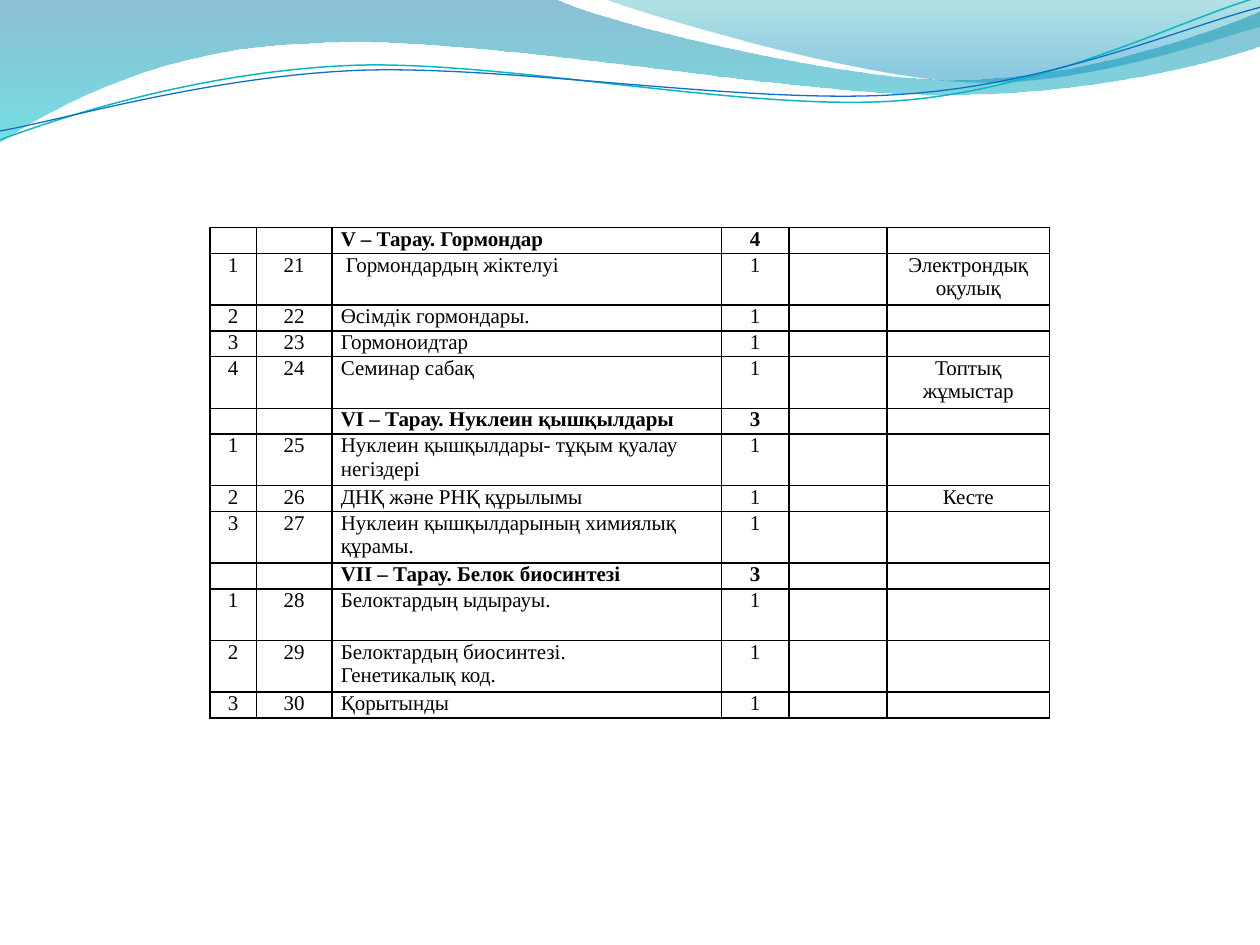
from math import cos, radians, sin

from lxml.etree import SubElement
from pptx import Presentation
from pptx.dml.color import RGBColor
from pptx.enum.text import PP_ALIGN
from pptx.oxml import parse_xml
from pptx.oxml.ns import nsdecls, qn
from pptx.util import Cm, Pt

LEFT_WAVE = [
    (0, 0), (11.18, -0.03),
    (12.09, 0.43, 16.87, 1.6, 19.25, 1.6),
    (21.79, 1.6, 24.33, 0.66, 25.4, 0.23),
    (25.43, 0.91),
    (24.97, 1.12, 22.1, 1.93, 18.95, 1.91),
    (15.8, 1.91, 9.7, 0.71, 6.53, 0.86),
    (3.28, 0.91, 1.17, 2.11, -0.03, 2.87),
]
RIGHT_WAVE = [
    (12.17, -0.03),
    (12.93, 0.28, 17.32, 1.57, 19.53, 1.65),
    (21.74, 1.75, 24.41, 0.81, 25.4, 0.53),
    (25.4, 0),
]
TEAL_LINE = [
    (0, 2.82),
    (1.22, 2.36, 4.01, 1.45, 7.04, 1.32),
    (10.03, 1.19, 15.06, 2.26, 18.11, 2.03),
    (21.16, 1.8, 23.83, 0.38, 25.35, -0.05),
]
BLUE_LINE = [
    (0, 2.64),
    (1.19, 2.44, 4.17, 1.55, 7.19, 1.42),
    (10.24, 1.3, 15.16, 2.13, 18.21, 1.9),
    (21.23, 1.7, 23.9, 0.53, 25.4, 0.15),
]
TILT = 2.7
COLUMNS = [0.94, 1.52, 7.85, 1.37, 1.97, 3.28]
LINE_HEIGHT = 0.52
CHAPTERS = [
    ("V – Тарау. Гормондар", [
        (2, " Гормондардың жіктелуі", "Электрондық оқулық"),
        (1, "Өсімдік гормондары.", ""),
        (1, "Гормоноидтар", ""),
        (2, "Семинар сабақ", "Топтық жұмыстар"),
    ]),
    ("VІ – Тарау. Нуклеин қышқылдары", [
        (2, "Нуклеин қышқылдары- тұқым қуалау негіздері", ""),
        (1, "ДНҚ және РНҚ құрылымы", "Кесте"),
        (2, "Нуклеин қышқылдарының химиялық құрамы.", ""),
    ]),
    ("VІІ – Тарау. Белок биосинтезі", [
        (2, "Белоктардың ыдырауы.", ""),
        (2, "Белоктардың биосинтезі.\nГенетикалық код.", ""),
        (1, "Қорытынды", ""),
    ]),
]


def rgb(value):
    return RGBColor.from_string(value)


def pairs(segment):
    return list(zip(segment[::2], segment[1::2]))


def turn(segments, center, degrees):
    cx, cy = center
    c, s = cos(radians(degrees)), sin(radians(degrees))
    return [
        [v for x, y in pairs(segment)
         for v in (cx + (x - cx) * c - (y - cy) * s, cy + (x - cx) * s + (y - cy) * c)]
        for segment in segments]


def lesson_rows(chapters):
    rows = []
    lesson = 21
    for title, topics in chapters:
        rows.append((1, True, ["", "", title, str(len(topics)), "", ""]))
        for number, (lines, topic, aid) in enumerate(topics, 1):
            rows.append((lines, False, [str(number), str(lesson), topic, "1", "", aid]))
            lesson += 1
    return rows


class Deck:
    font = "Times New Roman"
    size = 12
    ink = "000000"

    def __init__(self, slide):
        self.slide = slide

    def outline(self, segments, close):
        points = [(Cm(x), Cm(y)) for segment in segments for x, y in pairs(segment)]
        builder = self.slide.shapes.build_freeform(*points[0])
        builder.add_line_segments(points[1:], close=close)
        sp = builder.convert_to_shape()
        sp.shadow.inherit = False
        steps = iter(list(sp._element.iter(qn("a:lnTo"))))
        for segment in segments[1:]:
            first = next(steps)
            if len(segment) == 6:
                first.tag = qn("a:cubicBezTo")
                for step in (next(steps), next(steps)):
                    first.append(step[0])
                    step.getparent().remove(step)
        return sp

    def wave(self, segments, stops):
        sp = self.outline(segments, True)
        sp.line.fill.background()
        sp.fill.gradient()
        sp.fill.gradient_angle = 270
        for stop, (position, color, opacity) in zip(sp.fill.gradient_stops, stops):
            stop.position = position
            stop.color.rgb = rgb(color)
        for clr, (_, _, opacity) in zip(sp._element.spPr.iter(qn("a:srgbClr")), stops):
            SubElement(clr, qn("a:alpha"), val=str(opacity * 1000))

    def curve(self, segments, center, color, width):
        sp = self.outline(turn(segments, center, TILT), False)
        sp.rotation = 360 - TILT
        sp.fill.background()
        sp.line.color.rgb = rgb(color)
        sp.line.width = Pt(width)

    def table(self, left, top, columns, rows):
        height = sum(row[0] for row in rows) * LINE_HEIGHT
        table = self.slide.shapes.add_table(
            len(rows), len(columns), Cm(left), Cm(top), Cm(sum(columns)), Cm(height)).table
        table.first_row = table.horz_banding = False
        for column, width in zip(table.columns, columns):
            column.width = Cm(width)
        for i, (lines, bold, texts) in enumerate(rows):
            table.rows[i].height = Cm(lines * LINE_HEIGHT)
            for j, text in enumerate(texts):
                align = PP_ALIGN.LEFT if j == 2 else PP_ALIGN.CENTER
                self.cell(table.cell(i, j), text, bold, align)

    def cell(self, cell, text, bold, align):
        cell.margin_left = cell.margin_right = Cm(0.18)
        cell.margin_top = cell.margin_bottom = 0
        cell.fill.background()
        tf = cell.text_frame
        for i, line in enumerate(text.split("\n")):
            p = tf.add_paragraph() if i else tf.paragraphs[0]
            p.alignment = align
            if line:
                r = p.add_run()
                r.text = line
                r.font.name = self.font
                r.font.size = Pt(self.size)
                r.font.bold = bold
                r.font.color.rgb = rgb(self.ink)
            else:
                SubElement(p._p, qn("a:endParaRPr"), sz=str(self.size * 100))
        for i, side in enumerate("LRTB"):
            cell._tc.tcPr.insert(i, parse_xml(
                f'<a:ln{side} {nsdecls("a")} w="12700"><a:solidFill>'
                f'<a:srgbClr val="{self.ink}"/></a:solidFill></a:ln{side}>'))


def main():
    prs = Presentation()
    prs.slide_width = Cm(25.4)
    prs.slide_height = Cm(19.05)
    s = Deck(prs.slides.add_slide(prs.slide_layouts[6]))
    s.wave(LEFT_WAVE, [(0, "0074A1", 45), (1, "00C6CF", 55)])
    s.wave(RIGHT_WAVE, [(0, "00A1A9", 30), (0.8, "008BBF", 45)])
    s.curve(TEAL_LINE, (12.67, 1.46), "0AB8BF", 0.85)
    s.curve(BLUE_LINE, (12.69, 1.5), "0F6FC6", 0.75)
    s.table(4.23, 4.59, COLUMNS, lesson_rows(CHAPTERS))
    prs.save("out.pptx")


if __name__ == "__main__":
    main()
